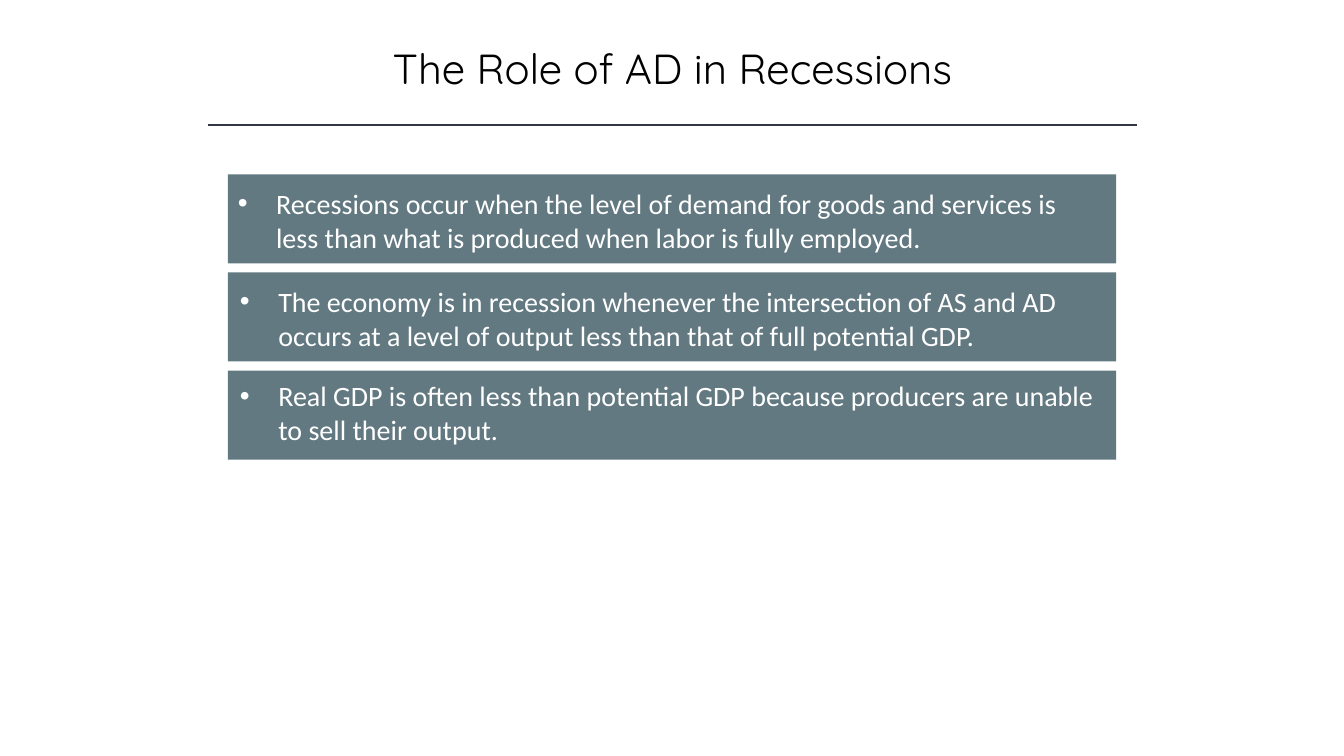
from lxml import etree
from pptx import Presentation
from pptx.dml.color import RGBColor
from pptx.enum.shapes import MSO_CONNECTOR as CONN, MSO_SHAPE as SHAPE
from pptx.enum.text import MSO_ANCHOR as ANCHOR, PP_ALIGN as ALIGN
from pptx.oxml.ns import qn
from pptx.util import Inches, Pt

TITLE = "The Role of AD in Recessions"
# Text of each card with its left and top inset
CARDS = [
    ("Recessions occur when the level of demand for goods and services is "
     "less than what is produced when labor is fully employed.", 0.1, 0.12),
    ("The economy is in recession whenever the intersection of AS and AD "
     "occurs at a level of output less than that of full potential GDP.", 0.12, 0.12),
    ("Real GDP is often less than potential GDP because producers are unable "
     "to sell their output.", 0.12, 0.08),
]


def color(value):
    return RGBColor.from_string(value)


def set_font(p, name, size, value):
    p.font.name = name
    p.font.size = Pt(size)
    p.font.color.rgb = color(value)


def add_bullet(p, indent):
    pPr = p._p.get_or_add_pPr()
    pPr.set("marL", str(Inches(indent)))
    pPr.set("indent", str(-Inches(indent)))
    # The bullet font and character precede default run properties
    font = etree.Element(qn("a:buFont"), typeface="Arial")
    char = etree.Element(qn("a:buChar"), char="•")
    pPr.insert(0, font)
    pPr.insert(1, char)


def add_title(slide, x, y, w, h):
    tf = slide.shapes.add_textbox(Inches(x), Inches(y), Inches(w), Inches(h)).text_frame
    tf.word_wrap = True
    p = tf.paragraphs[0]
    p.text = TITLE
    p.alignment = ALIGN.CENTER
    set_font(p, "Quicksand", 30, "000000")


def add_rule(slide, x, y, w):
    line = slide.shapes.add_connector(
        CONN.STRAIGHT, Inches(x), Inches(y), Inches(x + w), Inches(y))
    line.line.color.rgb = color("323542")
    line.line.width = Pt(1)
    etree.SubElement(line._element.spPr, qn("a:effectLst"))


def add_card(slide, x, y, w, h, text, left, top):
    s = slide.shapes.add_shape(SHAPE.RECTANGLE, Inches(x), Inches(y), Inches(w), Inches(h))
    s.shadow.inherit = False
    s.fill.solid()
    s.fill.fore_color.rgb = color("627981")
    s.line.fill.background()

    tf = s.text_frame
    tf.word_wrap = True
    tf.vertical_anchor = ANCHOR.TOP
    tf.margin_left, tf.margin_top = Inches(left), Inches(top)
    tf.margin_right, tf.margin_bottom = Inches(0.2), Inches(0.05)
    p = tf.paragraphs[0]
    p.text = text
    p.alignment = ALIGN.LEFT
    set_font(p, "Calibri", 20, "FFFFFF")
    add_bullet(p, 0.38)


def add_cards(slide, x, y, w, h, gap=0.09):
    card_h = (h - gap * (len(CARDS) - 1)) / len(CARDS)
    for i, card in enumerate(CARDS):
        add_card(slide, x, y + i * (card_h + gap), w, card_h, *card)


def main():
    prs = Presentation()
    prs.slide_width, prs.slide_height = Inches(13.33), Inches(7.5)
    slide = prs.slides.add_slide(prs.slide_layouts[6])
    add_title(slide, 1.67, 0.37, 10, 0.61)
    add_rule(slide, 2.06, 1.24, 9.22)
    add_cards(slide, 2.26, 1.73, 8.81, 2.83)
    prs.save("out.pptx")


if __name__ == "__main__":
    main()
